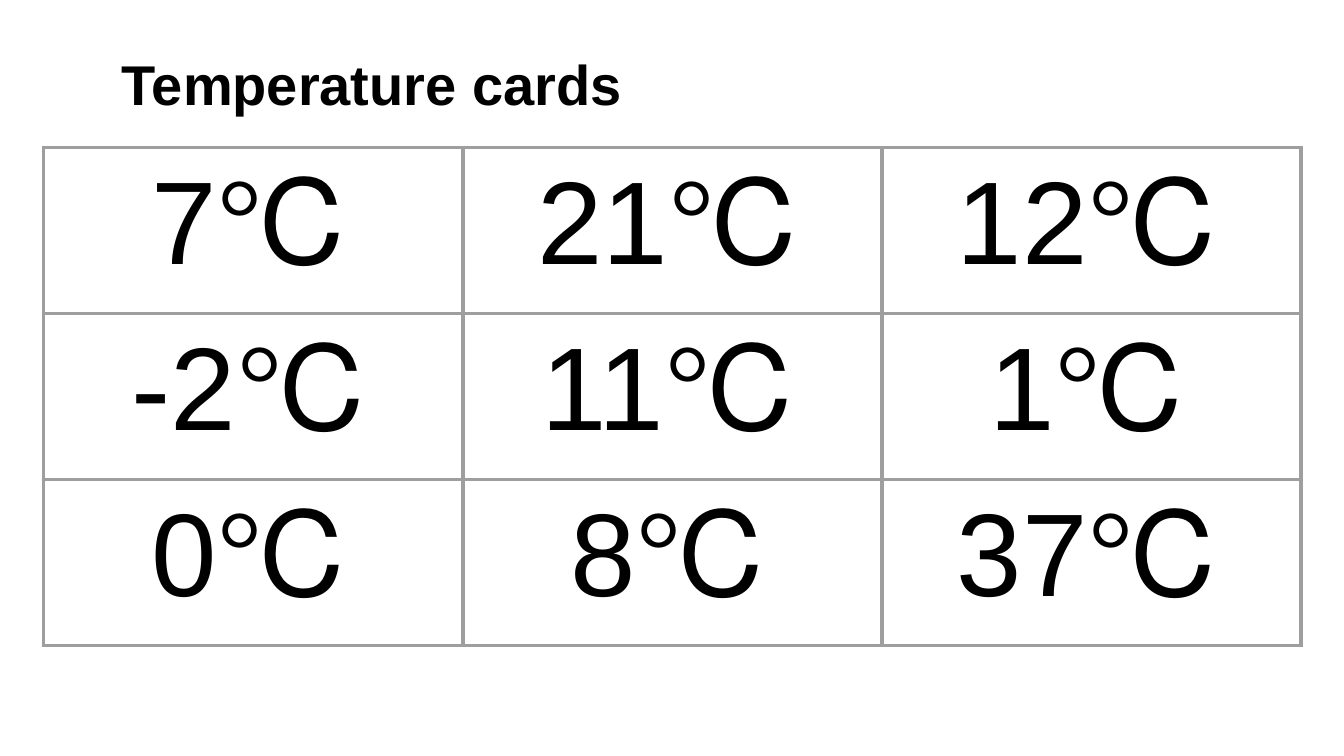
import pptx
import pptx.dml.color
import pptx.enum.text
import pptx.oxml.ns
import pptx.util
from lxml import etree

Pt = pptx.util.Pt
ALIGN = pptx.enum.text.PP_ALIGN

# Content
TITLE = "Temperature cards"
CARDS = [
    ["7℃", "21℃", "12℃"],
    ["-2℃", "11℃", "1℃"],
    ["0℃", "8℃", "37℃"],
]

# Layout, in points
SLIDE_WIDTH, SLIDE_HEIGHT = 960, 540
TITLE_BOX = (80, 28.8, 841, 395.3)
TABLE_LEFT, TABLE_TOP = 31, 105.3
CARD_WIDTH, CARD_HEIGHT = 299.5, 118.6
CARD_MARGIN = 7.2
BORDER_WIDTH = 3

# Style
FONT = "Arial"
BLACK, GREY = "000000", "9E9E9E"


def color(value):
    return pptx.dml.color.RGBColor.from_string(value)


def write(frame, text, size, bold=False, align=ALIGN.LEFT, spacing=None):
    paragraph = frame.paragraphs[0]
    paragraph.alignment = align
    if spacing:
        paragraph.line_spacing = spacing
    run = paragraph.add_run()
    run.text = text
    run.font.name = FONT
    run.font.size = Pt(size)
    run.font.bold = bold
    run.font.color.rgb = color(BLACK)


def add_borders(cell):
    properties = cell._tc.get_or_add_tcPr()
    qualify = pptx.oxml.ns.qn
    for side in ("a:lnL", "a:lnR", "a:lnT", "a:lnB"):
        line = etree.SubElement(properties, qualify(side), w=str(Pt(BORDER_WIDTH)))
        fill = etree.SubElement(line, qualify("a:solidFill"))
        etree.SubElement(fill, qualify("a:srgbClr"), val=GREY)


presentation = pptx.Presentation()
presentation.slide_width = Pt(SLIDE_WIDTH)
presentation.slide_height = Pt(SLIDE_HEIGHT)
slide = presentation.slides.add_slide(presentation.slide_layouts[6])

# Title
title = slide.shapes.add_textbox(*map(Pt, TITLE_BOX))
title.text_frame.word_wrap = True
write(title.text_frame, TITLE, size=40, bold=True, spacing=1.07)

# Table of cards
row_count, column_count = len(CARDS), len(CARDS[0])
table = slide.shapes.add_table(
    row_count, column_count, Pt(TABLE_LEFT), Pt(TABLE_TOP),
    Pt(CARD_WIDTH * column_count), Pt(CARD_HEIGHT * row_count)).table
table.first_row = False
table.horz_banding = False
for column in table.columns:
    column.width = Pt(CARD_WIDTH)
for row, temperatures in zip(table.rows, CARDS):
    row.height = Pt(CARD_HEIGHT)
    for cell, temperature in zip(row.cells, temperatures):
        cell.margin_left = cell.margin_right = Pt(CARD_MARGIN)
        cell.margin_top = cell.margin_bottom = Pt(CARD_MARGIN)
        add_borders(cell)
        cell.fill.background()
        write(cell.text_frame, temperature, size=84, align=ALIGN.CENTER)

presentation.save("out.pptx")
